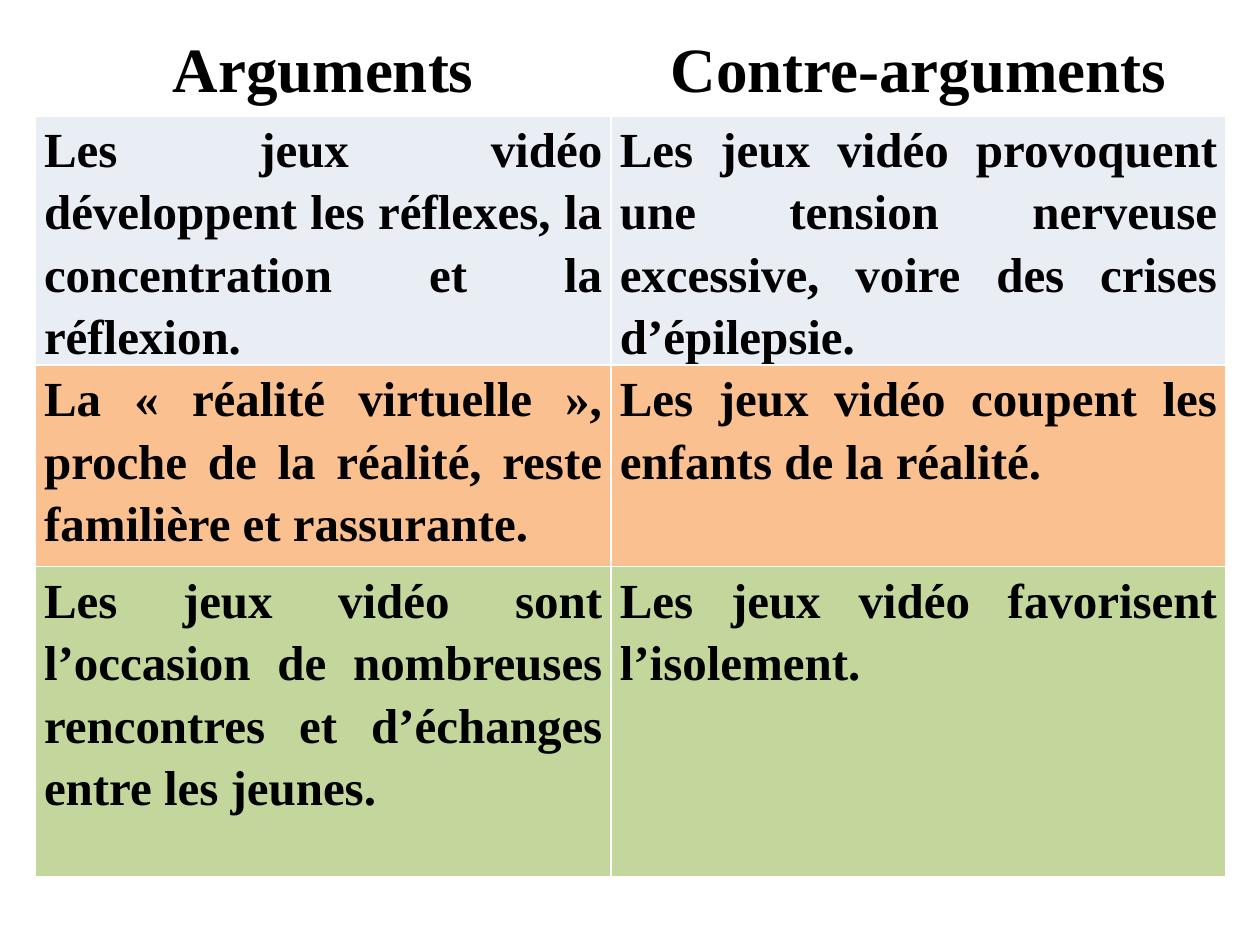
from dataclasses import dataclass

from lxml import etree
from pptx import Presentation
from pptx.dml.color import RGBColor
from pptx.enum.text import PP_ALIGN
from pptx.oxml.ns import qn
from pptx.table import _Cell
from pptx.util import Inches, Pt

CENTER, JUSTIFY = PP_ALIGN.CENTER, PP_ALIGN.JUSTIFY
FONT = "Times New Roman"
BLACK, WHITE = "000000", "FFFFFF"
WIDTH, HEIGHT = 10, 7.5
LEFT, TOP = 0.28, 0.21
COLS = (4.57, 4.88)
PAD = 0.07


@dataclass(frozen=True)
class Row:
    height: float
    fill: str
    texts: tuple[str, str]
    size: int = 28
    align: PP_ALIGN = JUSTIFY


ROWS = (
    Row(0.71, WHITE, ("Arguments", "Contre-arguments"), 36, CENTER),
    Row(1.97, "E9EDF4", (
        "Les jeux vidéo développent les réflexes, la concentration et la réflexion.",
        "Les jeux vidéo provoquent une tension nerveuse excessive, voire des crises d’épilepsie. ",
    )),
    Row(1.6, "FAC090", (
        "La « réalité virtuelle », proche de la réalité, reste familière et rassurante. ",
        "Les jeux vidéo coupent les enfants de la réalité. ",
    )),
    Row(2.46, "C3D69B", (
        "Les jeux vidéo sont l’occasion de nombreuses rencontres et d’échanges entre les jeunes.",
        "Les jeux vidéo favorisent l’isolement. ",
    )),
)


def color(code: str) -> RGBColor:
    return RGBColor.from_string(code)


def edge(cell: _Cell, code: str, width: float) -> None:
    """Line all four sides; borders must come before the fill in tcPr."""
    props = cell._tc.get_or_add_tcPr()
    for place, side in enumerate(("lnL", "lnR", "lnT", "lnB")):
        line = etree.Element(qn(f"a:{side}"), w=str(Pt(width)))
        fill = etree.SubElement(line, qn("a:solidFill"))
        etree.SubElement(fill, qn("a:srgbClr"), val=code)
        props.insert(place, line)


def write(cell: _Cell, text: str, row: Row) -> None:
    cell.margin_left = cell.margin_right = Inches(PAD)
    cell.margin_top = cell.margin_bottom = 0
    cell.fill.solid()
    cell.fill.fore_color.rgb = color(row.fill)
    edge(cell, WHITE, 1)
    para = cell.text_frame.paragraphs[0]
    para.alignment = row.align
    para.line_spacing = 1.15
    run = para.add_run()
    run.text = text
    font = run.font
    font.name, font.size, font.bold = FONT, Pt(row.size), True
    font.color.rgb = color(BLACK)


def main() -> None:
    deck = Presentation()
    deck.slide_width, deck.slide_height = Inches(WIDTH), Inches(HEIGHT)
    slide = deck.slides.add_slide(deck.slide_layouts[6])
    total = sum(row.height for row in ROWS)
    table = slide.shapes.add_table(
        len(ROWS), len(COLS), Inches(LEFT), Inches(TOP),
        Inches(sum(COLS)), Inches(total),
    ).table
    for col, width in zip(table.columns, COLS):
        col.width = Inches(width)
    for line, row in zip(table.rows, ROWS):
        line.height = Inches(row.height)
        for cell, text in zip(line.cells, row.texts):
            write(cell, text, row)
    deck.save("out.pptx")


if __name__ == "__main__":
    main()
